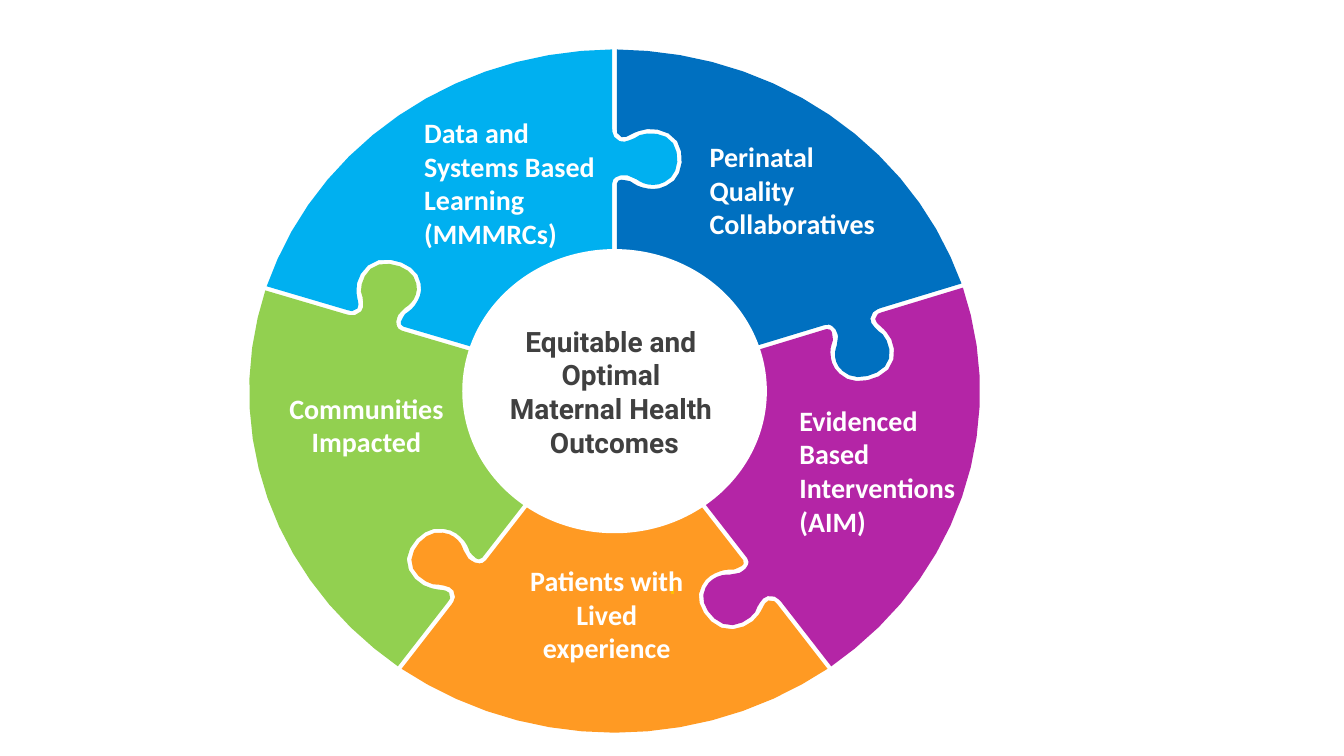
from math import cos, sin, radians, dist
from lxml import etree
from pptx import Presentation
from pptx.dml.color import RGBColor
from pptx.enum import shapes, text
from pptx.oxml import ns
from pptx.util import Pt

# Wheel geometry in points
MID = (439, 279.4)
RAD = (261, 244)
HUB = (108.8, 101.5)
RIM, BORE = 1, 0.38

# Joint at twelve o'clock, in 1/100 inch from the wheel's centre:
# a start, then Bezier triples (two handles and an end)
SOCKET = [(2.3, -260),
          (2, -259), (2, -253), (7, -252),
          (10, -251), (13, -253), (17, -255),
          (19, -256), (21, -257), (24, -258),
          (33, -262), (53, -261), (62, -248),
          (70, -235), (67, -217), (59, -209),
          (48, -200), (40, -200), (33, -201),
          (26, -202), (22, -204), (19, -206),
          (17, -208), (14, -209), (12, -209),
          (8, -210), (5, -210), (4, -209),
          (3, -208), (2, -207), (2.3, -206)]
TAB = [(-2.3, -206),
       (-2, -209), (-1, -211), (1, -212),
       (5, -215), (11, -214), (13, -214),
       (16, -213), (19, -211), (22, -210),
       (25, -208), (28, -206), (33, -205),
       (40, -204), (47, -204), (56, -212),
       (63, -219), (65, -235), (58, -246),
       (51, -257), (33, -257), (25, -254),
       (23, -254), (21, -252), (20, -251),
       (15, -249), (10, -246), (5, -248),
       (-3, -251), (-2, -259), (-2.3, -260)]
EDGE_OUT, EDGE_IN, HALF = -339, -130, 2.3

# Joint angles and piece colours, clockwise from the top
JOINTS = [0, 72, 144, 216, 287.5, 360]
COLORS = ["0070C0", "B425A6", "FF9A23", "92D050", "00B0F0"]

# Lines, left, top, width, height, centred
LABELS = [
    (["Perinatal Quality Collaboratives"], 506.9, 99.8, 132.5, 76.5, False),
    (["Evidenced Based Interventions", "(AIM)"], 571, 288, 129.6, 76.5, False),
    (["Patients with Lived experience"], 368.6, 402.5, 129.6, 76.5, True),
    (["Communities", "Impacted"], 197, 279.4, 129.6, 76.5, True),
]


def color(code):
    return RGBColor.from_string(code)


def smooth(curve):
    """Turn a chain of Bezier curves into points, more on longer ones."""
    dots = [curve[0]]
    for i in range(0, len(curve) - 1, 3):
        a, b, c, d = curve[i:i + 4]
        parts = min(4, 1 + int(dist(a, d) / 6))
        for n in range(1, parts + 1):
            t = n / parts
            u = 1 - t
            dots.append(tuple(
                u**3 * p + 3 * u * u * t * q + 3 * u * t * t * r + t**3 * s
                for p, q, r, s in zip(a, b, c, d)))
    return dots


def turn(dots, angle):
    """Rotate a joint around the wheel, keeping its oval proportions."""
    co, si = cos(radians(angle)), sin(radians(angle))
    out = []
    for x, y in dots:
        x, y = x * 0.72 / RAD[0], y * 0.72 / RAD[1]
        out.append((MID[0] + RAD[0] * (x * co - y * si),
                    MID[1] + RAD[1] * (x * si + y * co)))
    return out


def arc(size, start, end, count):
    """Inner points of an oval arc; angles run clockwise from the top."""
    angles = [radians(start + (end - start) * n / count)
              for n in range(1, count)]
    return [(MID[0] + RAD[0] * size * sin(a), MID[1] - RAD[1] * size * cos(a))
            for a in angles]


def piece(start, end):
    """Outline of one puzzle piece: socket, bore, tab, rim."""
    socket = [(HALF, EDGE_OUT)] + smooth(SOCKET) + [(HALF, EDGE_IN)]
    tab = [(-HALF, EDGE_IN)] + smooth(TAB) + [(-HALF, EDGE_OUT)]
    return (turn(socket, start) + arc(BORE, start, end, 4)
            + turn(tab, end) + arc(RIM, end, start, 14))


class Slide:
    def __init__(self, deck):
        self.page = deck.slides.add_slide(deck.slide_layouts[6])
        self.white, self.gray = "FFFFFF", "404040"
        self.font, self.size = "Calibri", 20

    def plain(self, shape, fill):
        shape.shadow.inherit = False
        shape.fill.solid()
        shape.fill.fore_color.rgb = color(fill)
        shape.line.fill.background()

    def outline(self, home, dots, fill):
        dots = [(Pt(x), Pt(y)) for x, y in dots]
        form = home.build_freeform(*dots[0], scale=1.0)
        form.add_line_segments(dots[1:], close=True)
        self.plain(form.convert_to_shape(), fill)

    def oval(self, home, mid, rad, fill):
        shape = home.add_shape(
            shapes.MSO_SHAPE.OVAL, Pt(mid[0] - rad[0]), Pt(mid[1] - rad[1]),
            Pt(2 * rad[0]), Pt(2 * rad[1]))
        self.plain(shape, fill)

    def line(self, x1, y1, x2, y2, tint, width):
        link = self.page.shapes.add_connector(
            shapes.MSO_CONNECTOR.STRAIGHT, Pt(x1), Pt(y1), Pt(x2), Pt(y2))
        link.line.color.rgb = color(tint)
        link.line.width = Pt(width)
        etree.SubElement(link._element.spPr, ns.qn("a:effectLst"))

    def label(self, lines, left, top, width, height, center=False, home=None,
              font=None, tint=None, wrap=True, middle=False, pad=(0, 0)):
        home = home or self.page.shapes
        box = home.add_textbox(Pt(left), Pt(top), Pt(width), Pt(height))
        frame = box.text_frame
        frame.word_wrap = wrap
        frame.margin_left = frame.margin_right = Pt(pad[0])
        frame.margin_top = frame.margin_bottom = Pt(pad[1])
        if middle:
            frame.vertical_anchor = text.MSO_ANCHOR.MIDDLE
        frame.text = "\n".join(lines)
        for para in frame.paragraphs:
            para.alignment = (text.PP_ALIGN.CENTER if center
                              else text.PP_ALIGN.LEFT)
            para.font.name = font or self.font
            para.font.size = Pt(self.size)
            para.font.bold = True
            para.font.color.rgb = color(tint or self.white)
        return frame


def main():
    deck = Presentation()
    deck.slide_width, deck.slide_height = Pt(960), Pt(540)
    slide = Slide(deck)

    # Puzzle wheel
    wheel = slide.page.shapes.add_group_shape().shapes
    for start, end, fill in zip(JOINTS, JOINTS[1:], COLORS):
        slide.outline(wheel, piece(start, end), fill)

    # Hub
    slide.oval(wheel, MID, HUB, slide.white)
    slide.label(["Equitable and ", "Optimal ", "Maternal Health ", "Outcomes"],
                351.4, 227.8, 175, 103.7, center=True, home=wheel,
                font="Roboto", tint=slide.gray, wrap=False, middle=True)

    # Short tick behind the lower label
    slide.line(480.2, 416.2, 480.2, 424.1, "FFC000", 2)

    # Piece labels
    for lines, left, top, width, height, center in LABELS:
        slide.label(lines, left, top, width, height, center)
    data = slide.label(["Data and Systems Based Learning (MMMRCs)"],
                       295.9, 79, 146.2, 104.4, pad=(7.2, 3.6))
    data.auto_size = text.MSO_AUTO_SIZE.SHAPE_TO_FIT_TEXT

    deck.save("out.pptx")


if __name__ == "__main__":
    main()
